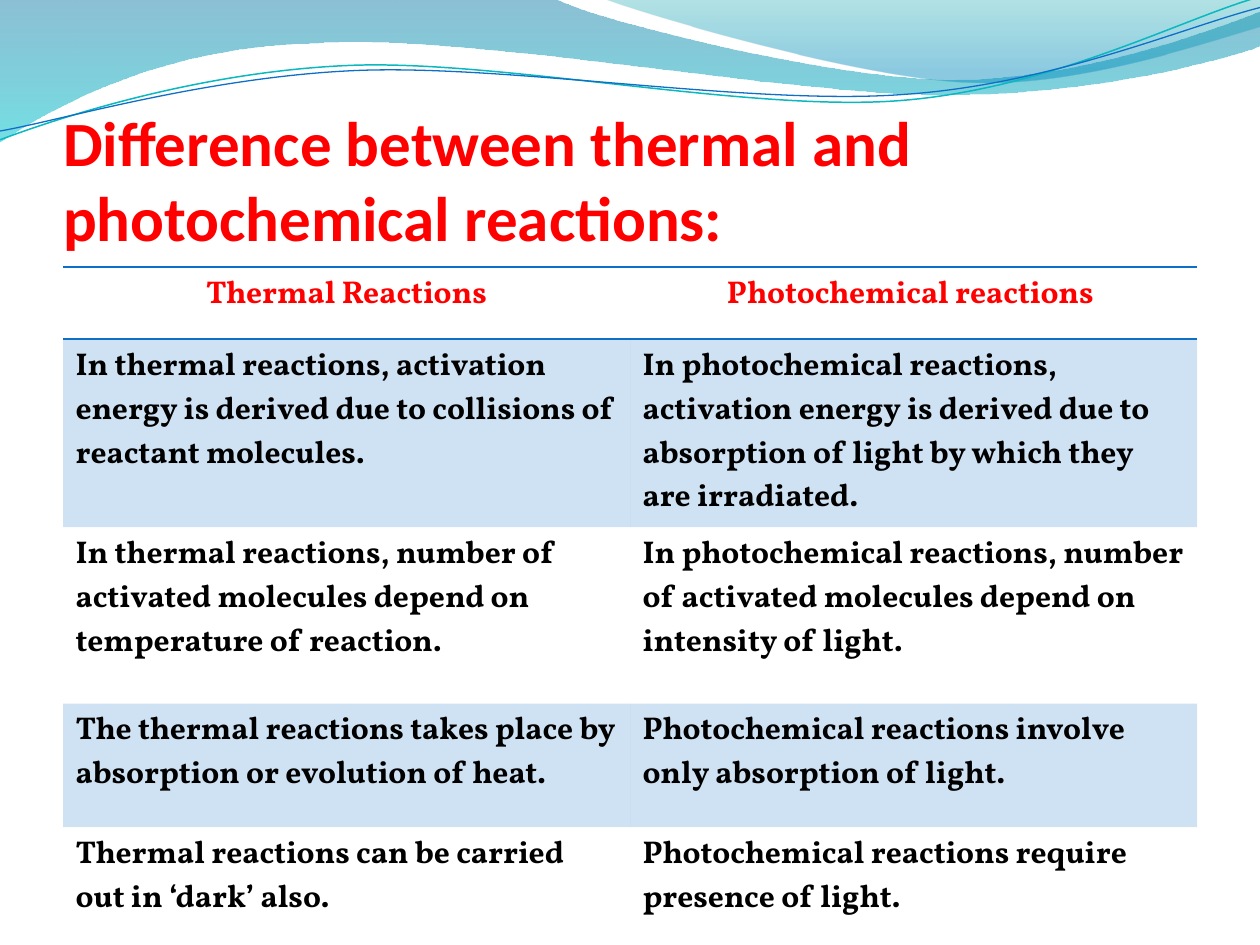
from lxml.etree import SubElement
from pptx import Presentation
from pptx.dml.color import RGBColor
from pptx.enum.text import MSO_ANCHOR, MSO_AUTO_SIZE, PP_ALIGN
from pptx.oxml import parse_xml
from pptx.oxml.ns import qn
from pptx.util import Inches, Pt

NS = 'xmlns:a="http://schemas.openxmlformats.org/drawingml/2006/main"'
BLUE, RED, BLACK = "0F6FC6", "FF0000", "000000"


def color(text):
    return RGBColor.from_string(text)


def trace(start, parts, closed):
    """Draw a shape from (x, y) lines and six-number Bezier curves."""
    points = [(Inches(part[i]), Inches(part[i + 1]))
              for part in parts for i in range(0, len(part), 2)]
    pen = slide.shapes.build_freeform(Inches(start[0]), Inches(start[1]), scale=1.0)
    pen.add_line_segments(points, close=closed)
    shape = pen.convert_to_shape()
    shape.shadow.inherit = False
    # Turn each curve's three line steps into one Bezier step
    steps = iter(list(shape._element.iter(qn("a:lnTo"))))
    for part in parts:
        first = next(steps)
        if len(part) == 6:
            first.tag = qn("a:cubicBezTo")
            for step in (next(steps), next(steps)):
                first.append(step[0])
                step.getparent().remove(step)
    return shape


deck = Presentation()
deck.slide_width, deck.slide_height = Inches(10), Inches(7.5)
slide = deck.slides.add_slide(deck.slide_layouts[5])

# Waves along the top, each with gradient stops of place, colour and opacity
waves = [
    ((0, 0), [(4.4, -0.01), (4.76, 0.17, 6.64, 0.63, 7.58, 0.63),
              (8.53, 0.63, 9.58, 0.26, 10, 0.09), (10.01, 0.36),
              (9.83, 0.44, 8.7, 0.76, 7.46, 0.75), (6.22, 0.75, 3.82, 0.28, 2.57, 0.34),
              (1.29, 0.36, 0.46, 0.83, -0.01, 1.13), (0, 0)],
     [(0, "0074A1", 45), (100, "00C6CF", 55)]),
    ((4.79, -0.01), [(5.09, 0.11, 6.82, 0.62, 7.69, 0.65),
                     (8.56, 0.69, 9.61, 0.32, 10, 0.21), (10, 0), (4.79, -0.01)],
     [(0, "00A1A9", 30), (80, "008BBF", 45)]),
]
for start, parts, stops in waves:
    wave = trace(start, parts, True)
    wave.line.fill.background()
    marks = "".join(
        f'<a:gs pos="{pos * 1000}"><a:srgbClr val="{tone}"><a:alpha val="{part * 1000}"/></a:srgbClr></a:gs>'
        for pos, tone, part in stops)
    grad = parse_xml(f'<a:gradFill {NS} rotWithShape="1"><a:gsLst>{marks}</a:gsLst>'
                     '<a:lin ang="5400000" scaled="0"/></a:gradFill>')
    wave._element.spPr.find(qn("a:custGeom")).addnext(grad)

# Thin curves under the waves
curves = [
    ((0, 1.11), [(0.48, 0.93, 1.58, 0.57, 2.77, 0.52), (3.95, 0.47, 5.93, 0.89, 7.13, 0.8),
                 (8.33, 0.71, 9.38, 0.15, 9.98, -0.02)], "0AB8BF", 0.85),
    ((0, 1.04), [(0.47, 0.96, 1.64, 0.61, 2.83, 0.56), (4.03, 0.51, 5.97, 0.84, 7.17, 0.75),
                 (8.36, 0.67, 9.41, 0.21, 10, 0.06)], BLUE, 0.75),
]
for start, parts, tone, width in curves:
    curve = trace(start, parts, False)
    curve.fill.background()
    curve.line.color.rgb = color(tone)
    curve.line.width = Pt(width)

# Title, in front of the waves
title = slide.shapes.title
slide.shapes._spTree.append(title._element)
title.left, title.top, title.width, title.height = map(Inches, (0.5, 0.77, 9, 1.25))
frame = title.text_frame
frame.text = "Difference between thermal and photochemical reactions:"
frame.auto_size = MSO_AUTO_SIZE.NONE
frame.vertical_anchor = MSO_ANCHOR.BOTTOM
frame.margin_left = frame.margin_right = frame.margin_bottom = 0
frame.margin_top = Inches(0.05)
frame.paragraphs[0].alignment = PP_ALIGN.LEFT
font = frame.paragraphs[0].runs[0].font
font.name, font.size, font.bold = "Calibri", Pt(36), True
font.color.rgb = color(RED)

# Table
rows = [
    ("Thermal Reactions", "Photochemical reactions "),
    ("In thermal reactions, activation energy is derived due to collisions of reactant molecules.",
     "In photochemical reactions, activation energy is derived due to absorption of light "
     "by which they are irradiated."),
    ("In thermal reactions, number of activated molecules depend on temperature of reaction.",
     "In photochemical reactions, number of activated molecules depend on intensity of light."),
    ("The thermal reactions takes place by absorption or evolution of heat.",
     "Photochemical reactions involve only absorption of light."),
    ("Thermal reactions can be carried out in ‘dark’ also.",
     "Photochemical reactions require presence of light."),
]
heights = [0.57, 1.4, 1.4, 0.98, 0.98]
edges = {0: ["lnT", "lnB"], len(rows) - 1: ["lnB"]}
table = slide.shapes.add_table(len(rows), 2, Inches(0.5), Inches(2.12),
                               Inches(9), Inches(sum(heights))).table
table.first_row = table.horz_banding = False
# Plain style without grid
table._tbl.tblPr.find(qn("a:tableStyleId")).text = "{2D5ABB26-0587-4C30-8999-92F81FD0307C}"
for r, texts in enumerate(rows):
    table.rows[r].height = Inches(heights[r])
    for c, text in enumerate(texts):
        cell = table.cell(r, c)
        cell.text_frame.text = text
        para = cell.text_frame.paragraphs[0]
        para.alignment = PP_ALIGN.LEFT if r else PP_ALIGN.CENTER
        font = para.runs[0].font
        font.name, font.size, font.bold = "Vollkorn", Pt(18), True
        font.color.rgb = color(BLACK if r else RED)
        props = cell._tc.get_or_add_tcPr()
        if r % 2:
            cell.fill.solid()
            cell.fill.fore_color.rgb = color(BLUE)
            SubElement(props.find(".//" + qn("a:srgbClr")), qn("a:alpha"), val="20000")
        else:
            cell.fill.background()
        for i, edge in enumerate(edges.get(r, [])):
            props.insert(i, parse_xml(f'<a:{edge} {NS} w="12700"><a:solidFill>'
                                      f'<a:srgbClr val="{BLUE}"/></a:solidFill></a:{edge}>'))

deck.save("out.pptx")
